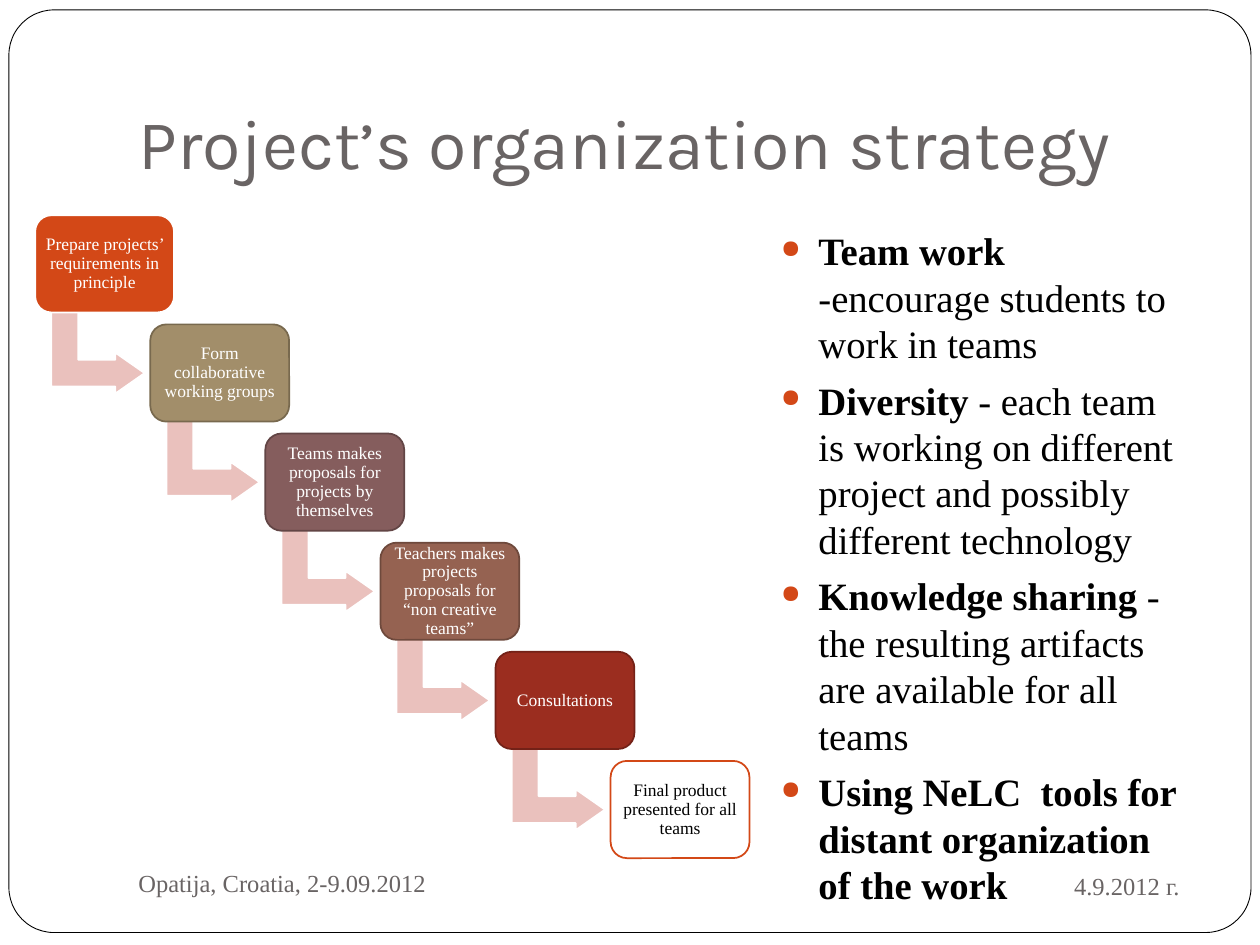
import lxml.etree
import pptx
import pptx.dml.color
import pptx.enum.shapes
import pptx.enum.text
import pptx.oxml.ns
import pptx.util
from pptx.util import Cm, Pt

RGBColor = pptx.dml.color.RGBColor
Shapes = pptx.enum.shapes.MSO_SHAPE
Align = pptx.enum.text.PP_ALIGN
Anchor = pptx.enum.text.MSO_ANCHOR

BLACK = RGBColor(0x00, 0x00, 0x00)
WHITE = RGBColor(0xFF, 0xFF, 0xFF)
GREY = RGBColor(0x69, 0x64, 0x64)
ORANGE = RGBColor(0xD3, 0x48, 0x17)
PINK = RGBColor(0xEA, 0xC1, 0xBD)
SAND = RGBColor(0xA2, 0x8E, 0x6A)
SAND_EDGE = RGBColor(0x78, 0x69, 0x4E)
PLUM = RGBColor(0x85, 0x5D, 0x5D)
PLUM_EDGE = RGBColor(0x62, 0x45, 0x45)
BROWN = RGBColor(0x95, 0x62, 0x51)
BROWN_EDGE = RGBColor(0x6E, 0x49, 0x3C)
RED = RGBColor(0x9B, 0x2D, 0x1F)
RED_EDGE = RGBColor(0x73, 0x21, 0x17)

TITLE_FONT = "Karla"
BODY_FONT = "Times New Roman"

# Text, fill, outline and font colour of each step
STEPS = [
    ("Prepare projects’ requirements in principle", ORANGE, WHITE, WHITE),
    ("Form collaborative working groups", SAND, SAND_EDGE, WHITE),
    ("Teams makes proposals for projects by themselves", PLUM, PLUM_EDGE, WHITE),
    ("Teachers makes projects proposals for “non creative teams”",
     BROWN, BROWN_EDGE, WHITE),
    ("Consultations", RED, RED_EDGE, WHITE),
    ("Final product presented for all teams", WHITE, ORANGE, BLACK),
]

# Bold lead and plain remainder of each bullet
PRINCIPLES = [
    ("Team work ", "-encourage students to work in teams"),
    ("Diversity", " - each team is working on different project and possibly "
                  "different technology"),
    ("Knowledge sharing ", "- the resulting artifacts are available for all teams"),
    ("Using NeLC  tools for distant organization of the work", ""),
]


class SlideBuilder:
    """Adds styled elements to one slide; places are in centimetres."""

    def __init__(self, slide):
        self.slide = slide

    def format_run(self, run, size, color, font=BODY_FONT, bold=False):
        run.font.name = font
        run.font.size = Pt(size)
        run.font.color.rgb = color
        run.font.bold = bold

    def shape(self, kind, place, fill, line, adjustments, line_width=1):
        shape = self.slide.shapes.add_shape(kind, *map(Cm, place))
        shape.shadow.inherit = False
        shape.fill.solid()
        shape.fill.fore_color.rgb = fill
        shape.line.color.rgb = line
        shape.line.width = Pt(line_width)
        for index, value in enumerate(adjustments):
            shape.adjustments[index] = value
        return shape

    def step(self, place, text, fill, line, color):
        shape = self.shape(Shapes.ROUNDED_RECTANGLE, place, fill, line, [0.167])
        frame = shape.text_frame
        frame.word_wrap = True
        frame.vertical_anchor = Anchor.MIDDLE
        frame.margin_left = frame.margin_right = Cm(0.1)
        frame.margin_top = frame.margin_bottom = Cm(0.1)
        frame.text = text
        paragraph = frame.paragraphs[0]
        paragraph.alignment = Align.CENTER
        paragraph.line_spacing = 0.9
        self.format_run(paragraph.runs[0], 10, color)

    def step_arrow(self, place):
        arrow = self.shape(Shapes.BENT_UP_ARROW, place, PINK, WHITE,
                           [0.328, 0.25, 0.358])
        arrow.rotation = 90

    def text_frame(self, place, anchor):
        frame = self.slide.shapes.add_textbox(*map(Cm, place)).text_frame
        frame.word_wrap = True
        frame.vertical_anchor = anchor
        return frame

    def label(self, place, text, size, font=BODY_FONT, anchor=Anchor.MIDDLE,
              alignment=Align.LEFT):
        frame = self.text_frame(place, anchor)
        frame.text = text
        paragraph = frame.paragraphs[0]
        paragraph.alignment = alignment
        self.format_run(paragraph.runs[0], size, GREY, font)
        return frame

    def bullet_list(self, place, items):
        frame = self.text_frame(place, Anchor.TOP)
        for index, (lead, remainder) in enumerate(items):
            paragraph = frame.paragraphs[0] if index == 0 else frame.add_paragraph()
            paragraph.space_before = Pt(5.8)
            self.add_bullet(paragraph)
            for text, bold in ((lead, True), (remainder, False)):
                if text:
                    run = paragraph.add_run()
                    run.text = text
                    self.format_run(run, 22.1, BLACK, bold=bold)

    def add_bullet(self, paragraph):
        """Give the paragraph a hanging orange dot."""
        qn = pptx.oxml.ns.qn
        properties = paragraph._p.get_or_add_pPr()
        properties.set("marL", str(Cm(0.76)))
        properties.set("indent", str(-Cm(0.76)))
        color = lxml.etree.SubElement(properties, qn("a:buClr"))
        lxml.etree.SubElement(color, qn("a:srgbClr"), val=str(ORANGE))
        lxml.etree.SubElement(properties, qn("a:buSzPct"), val="65000")
        lxml.etree.SubElement(properties, qn("a:buChar"), char="●")


def main():
    presentation = pptx.Presentation()
    presentation.slide_width = Cm(25.4)
    presentation.slide_height = Cm(19.05)
    slide = presentation.slides.add_slide(presentation.slide_layouts[6])
    builder = SlideBuilder(slide)

    builder.shape(Shapes.ROUNDED_RECTANGLE, (0.18, 0.2, 25.04, 18.6),
                  WHITE, BLACK, [0.049], line_width=0.5)
    title = builder.label((2.54, 0.76, 21.59, 3.18), "Project’s organization strategy",
                          40, TITLE_FONT, Anchor.BOTTOM)
    title.margin_bottom = Cm(0.25)
    builder.bullet_list((15.49, 4.45, 8.64, 12.57), PRINCIPLES)

    for index, step in enumerate(STEPS):
        left, top = 0.71 + 2.32 * index, 4.34 + 2.2 * index
        if index < len(STEPS) - 1:
            builder.step_arrow((left + 0.44, top + 1.83, 1.65, 1.88))
        builder.step((left, top, 2.8, 1.96), *step)

    builder.label((17.15, 17.2, 6.88, 1.32), "4.9.2012 г.", 14, alignment=Align.RIGHT)
    builder.label((2.54, 17.15, 11, 1.27), "Opatija, Croatia, 2-9.09.2012", 14)

    presentation.save("out.pptx")


if __name__ == "__main__":
    main()
